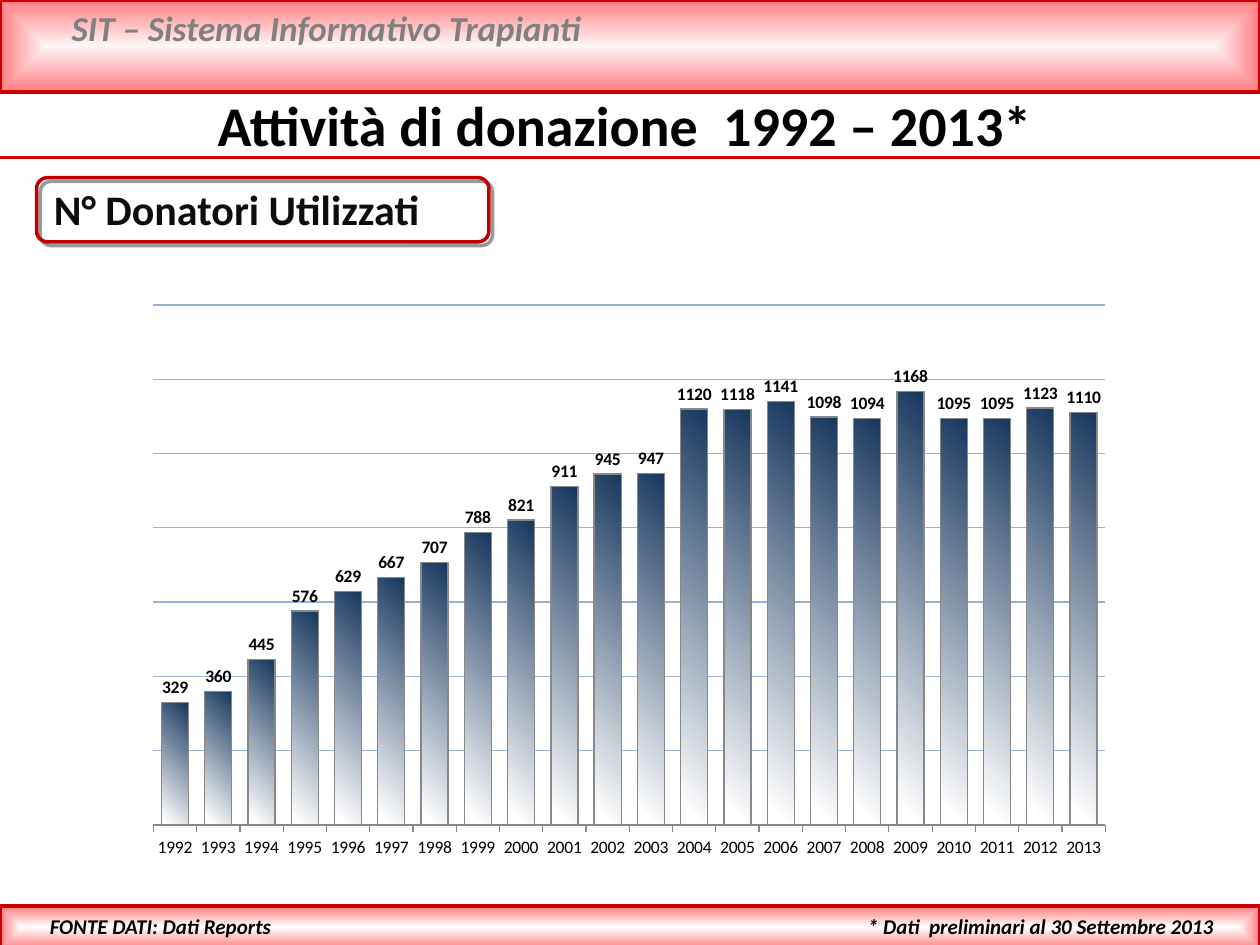
from lxml import etree
from pptx import Presentation
from pptx.chart.data import CategoryChartData
from pptx.dml.color import RGBColor
from pptx.enum.chart import XL_CHART_TYPE as ChartType, XL_LABEL_POSITION as LabelPosition
from pptx.enum.chart import XL_TICK_LABEL_POSITION as TickLabels, XL_TICK_MARK as TickMark
from pptx.enum.shapes import MSO_CONNECTOR as Connector, MSO_SHAPE as Shape
from pptx.enum.text import MSO_ANCHOR as Anchor, PP_ALIGN as Align
from pptx.oxml import parse_xml
from pptx.oxml.ns import nsdecls, qn
from pptx.util import Inches, Pt

FONT = "Calibri"
RED = "CC0000"
PINK = "FF7C80"
DONORS = [329, 360, 445, 576, 629, 667, 707, 788, 821, 911, 945, 947,
          1120, 1118, 1141, 1098, 1094, 1168, 1095, 1095, 1123, 1110]
YEARS = [str(1992 + offset) for offset in range(len(DONORS))]


def color(hex_code):
    """Turn a hex string into a colour."""
    return RGBColor.from_string(hex_code)


def set_font(font, size, hex_code="000000", bold=True, italic=False):
    """Set face, size, colour and style of a font."""
    font.name, font.size = FONT, Pt(size)
    font.bold, font.italic = bold, italic
    font.color.rgb = color(hex_code)


def set_line(line, hex_code, width):
    """Set colour and width of a line."""
    line.color.rgb = color(hex_code)
    line.width = Pt(width)


def set_gradient(fill, start, end, end_position=1.0):
    """Fill with a gradient of two colours."""
    fill.gradient()
    first, last = fill.gradient_stops
    first.color.rgb, last.color.rgb = color(start), color(end)
    first.position, last.position = 0, end_position


def write(box, words, size, align=Align.LEFT, **style):
    """Put one formatted paragraph into a box."""
    frame = box.text_frame
    frame.text = words
    frame.vertical_anchor = Anchor.TOP
    frame.margin_left = frame.margin_right = Inches(0.1)
    frame.margin_top = frame.margin_bottom = Inches(0.05)
    frame.word_wrap = True
    paragraph = frame.paragraphs[0]
    paragraph.alignment = align
    set_font(paragraph.runs[0].font, size, **style)


def add_text(slide, place, words, size, **style):
    """Add a text box at left, top, width, height."""
    box = slide.shapes.add_textbox(*map(Inches, place))
    write(box, words, size, **style)


def add_band(slide, top, height, center):
    """Add a full-width band that shades from its centre to pink edges."""
    band = slide.shapes.add_shape(Shape.RECTANGLE, 0, Inches(top), Inches(10), Inches(height))
    band.shadow.inherit = False
    set_line(band.line, RED, 2)
    set_gradient(band.fill, center, PINK)
    gradient = band._element.spPr.find(qn("a:gradFill"))
    gradient.remove(gradient.find(qn("a:lin")))
    gradient.append(parse_xml(
        f'<a:path {nsdecls("a")} path="rect">'
        '<a:fillToRect l="50000" t="50000" r="50000" b="50000"/></a:path>'))


def add_rule(slide, top):
    """Add a full-width red line."""
    rule = slide.shapes.add_connector(
        Connector.STRAIGHT, 0, Inches(top), Inches(10), Inches(top))
    set_line(rule.line, RED, 2)
    etree.SubElement(rule._element.spPr, qn("a:effectLst"))


def add_frame(slide, place):
    """Add a rounded red outline with a hard shadow."""
    frame = slide.shapes.add_shape(Shape.ROUNDED_RECTANGLE, *map(Inches, place))
    frame.adjustments[0] = 0.17
    frame.fill.background()
    set_line(frame.line, "C00000", 2)
    frame.shadow.inherit = False
    frame._element.spPr.find(qn("a:effectLst")).append(parse_xml(
        f'<a:outerShdw {nsdecls("a")} blurRad="0" dist="{Pt(3)}" dir="2700000" algn="tl" '
        'rotWithShape="0"><a:srgbClr val="000000"><a:alpha val="40000"/></a:srgbClr>'
        '</a:outerShdw>'))


def set_plot_area(chart, left, top, width, height):
    """Fix the inner plot area as fractions of the chart."""
    plot_area = chart._chartSpace.chart.plotArea
    for old_layout in plot_area.findall(qn("c:layout")):
        plot_area.remove(old_layout)
    sizes = "".join(f'<c:{tag} val="{value}"/>' for tag, value in
                    zip("xywh", (left, top, width, height)))
    plot_area.insert(0, parse_xml(
        f'<c:layout {nsdecls("c")}><c:manualLayout><c:layoutTarget val="inner"/>'
        f'<c:xMode val="edge"/><c:yMode val="edge"/>{sizes}</c:manualLayout></c:layout>'))


def format_axes(chart):
    """Show years below the columns and only gridlines for the values."""
    years, values = chart.category_axis, chart.value_axis
    years.major_tick_mark = TickMark.OUTSIDE
    years.has_major_gridlines = False
    set_line(years.format.line, "888888", 0.75)
    values.minimum_scale, values.maximum_scale, values.major_unit = 0, 1400, 200
    values.major_tick_mark = TickMark.NONE
    values.tick_label_position = TickLabels.NONE
    values.format.line.fill.background()
    set_line(values.major_gridlines.format.line, "95B3D7", 0.75)


def add_donor_chart(slide, place):
    """Add the column chart of donors per year."""
    data = CategoryChartData()
    data.categories = YEARS
    data.add_series("Series 1", DONORS)
    chart = slide.shapes.add_chart(
        ChartType.COLUMN_CLUSTERED, *map(Inches, place), data).chart
    chart.has_legend = chart.has_title = False
    set_font(chart.font, 10, bold=False)
    set_plot_area(chart, 0.02, 0.02, 0.96, 0.905)
    format_axes(chart)
    plot = chart.plots[0]
    plot.gap_width, plot.overlap, plot.vary_by_categories = 60, -20, False
    columns = plot.series[0].format
    set_gradient(columns.fill, "17375E", "FFFFFF", 0.96)
    columns.fill.gradient_angle = 225
    set_line(columns.line, "888888", 0.75)
    plot.has_data_labels = True
    labels = plot.data_labels
    labels.show_value = True
    labels.position = LabelPosition.OUTSIDE_END
    set_font(labels.font, 10)


def add_title(slide, place, words):
    """Move and format the title placeholder."""
    title = slide.shapes.title
    title.left, title.top, title.width, title.height = map(Inches, place)
    write(title, words, 32, align=Align.CENTER)


def main():
    """Build the slide on organ donation."""
    deck = Presentation()
    deck.slide_width, deck.slide_height = Inches(10), Inches(7.5)
    slide = deck.slides.add_slide(deck.slide_layouts[5])
    add_band(slide, 0, 0.73, "FFF6F6")
    add_text(slide, (0.47, 0, 8.98, 0.44), "SIT – Sistema Informativo Trapianti", 20,
             hex_code="808080", italic=True)
    add_band(slide, 7.19, 0.34, "FFFFFF")
    add_rule(slide, 1.25)
    add_text(slide, (6.79, 7.2, 3.21, 0.3), "* Dati  preliminari al 30 Settembre 2013", 12,
             italic=True)
    add_title(slide, (0, 0.67, 9.92, 0.64), "Attività di donazione  1992 – 2013*")
    add_text(slide, (0.33, 1.41, 3.57, 0.51), "N° Donatori Utilizzati", 24, hex_code="0D0D0D")
    add_frame(slide, (0.29, 1.41, 3.59, 0.51))
    add_text(slide, (0.27, 7.2, 1.98, 0.3), "FONTE DATI: Dati Reports", 12,
             align=Align.RIGHT, italic=True)
    add_donor_chart(slide, (1.06, 2.33, 7.87, 4.56))
    deck.save("out.pptx")


if __name__ == "__main__":
    main()
